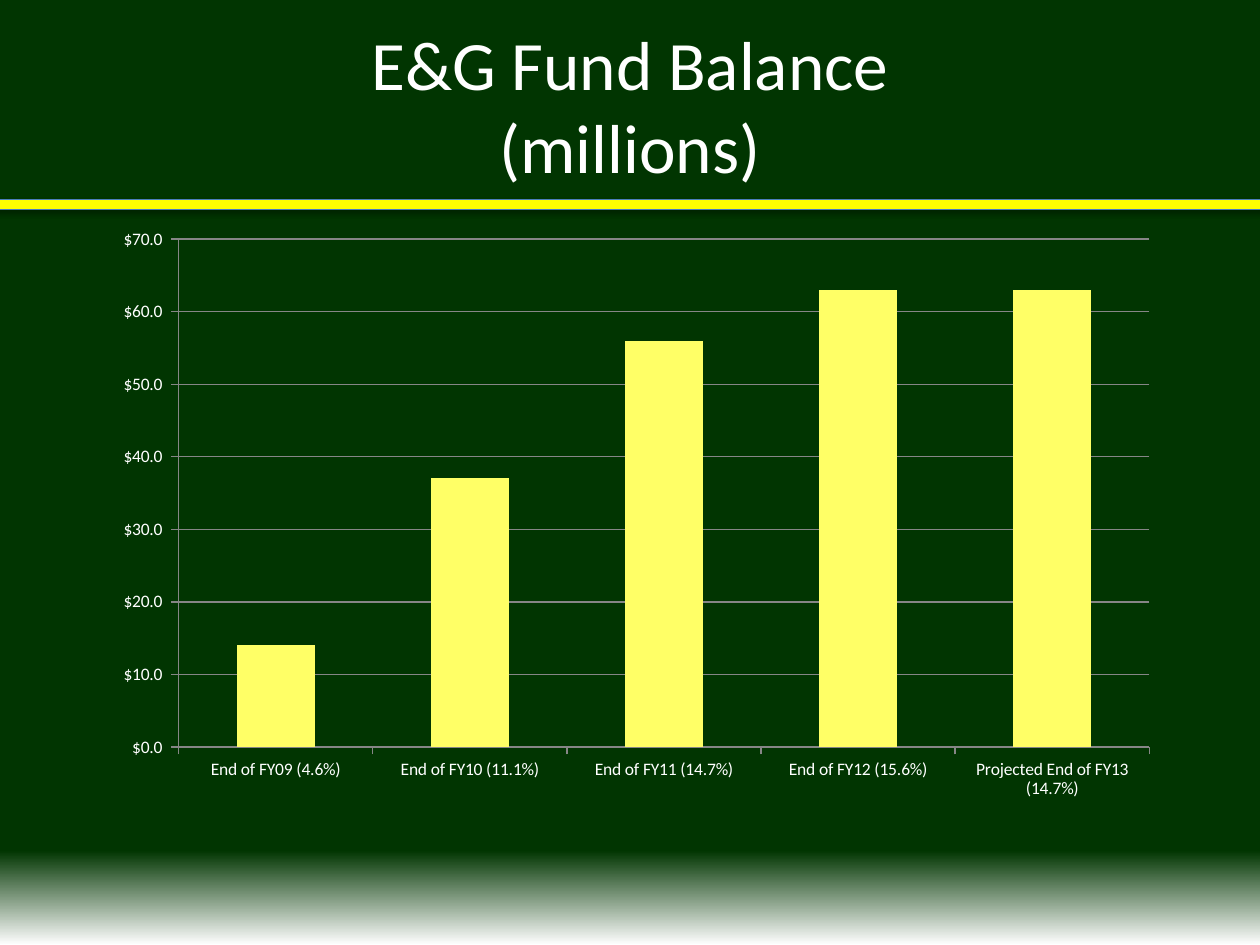
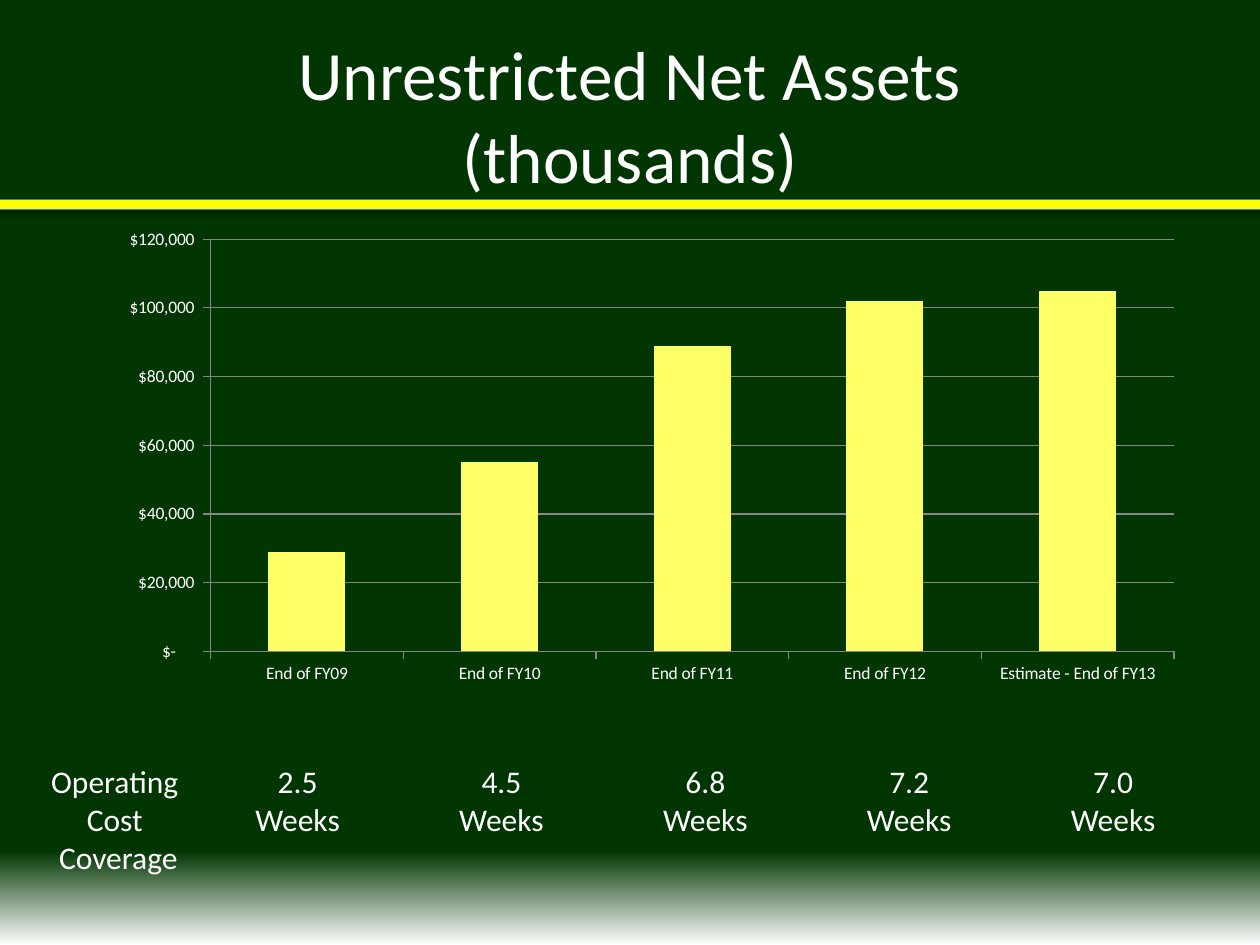
from dataclasses import dataclass

import lxml.etree
import pptx
import pptx.chart.data
import pptx.dml.color
import pptx.enum.chart
import pptx.enum.shapes
import pptx.enum.text
import pptx.oxml
import pptx.oxml.ns
import pptx.util
from pptx.util import Cm

COLORS = {
    "green": "013501",
    "white": "FFFFFF",
    "band": "FFFF00",
    "band_line": "4B7EBC",
    "bar": "FFFF66",
    "grid": "868686",
    "shadow": "000000",
}
FONT = "Calibri"


@dataclass(frozen=True)
class Box:
    left: float
    top: float
    width: float
    height: float

    def emu(self) -> tuple:
        return Cm(self.left), Cm(self.top), Cm(self.width), Cm(self.height)


@dataclass(frozen=True)
class ColumnChart:
    box: Box
    plot: tuple[float, float, float, float]
    categories: tuple[str, ...]
    values: tuple[float, ...]
    maximum: float
    step: float
    number_format: str


@dataclass(frozen=True)
class ChartSlide:
    title: tuple[str, str]
    title_top: float
    chart: ColumnChart


FUND_BALANCE = ChartSlide(
    ("E&G Fund Balance", "(millions)"),
    1.27,
    ColumnChart(
        Box(1.27, 0.84, 22.86, 16.18),
        (0.102, 0.246, 0.856, 0.633),
        ("End of FY09 (4.6%)", "End of FY10 (11.1%)", "End of FY11 (14.7%)",
         "End of FY12 (15.6%)", "Projected End of FY13 (14.7%)"),
        (14, 37, 56, 63, 63),
        70,
        10,
        r'"$"#,##0.0_);[Red]\("$"#,##0.0\)',
    ),
)
NET_ASSETS = ChartSlide(
    ("Unrestricted Net Assets", "(thousands)"),
    1.47,
    ColumnChart(
        Box(2.11, 4.45, 22.02, 9.53),
        (0.097, 0.039, 0.882, 0.872),
        ("End of FY09", "End of FY10", "End of FY11", "End of FY12",
         "Estimate - End of FY13"),
        (29000, 55000, 89000, 102000, 105000),
        120000,
        20000,
        r'_("$"* #,##0_);_("$"* \(#,##0\);_("$"* "-"??_);_(@_)',
    ),
)
COVERAGE_WEEKS = ("2.5", "4.5", "6.8", "7.2", "7.0")
COVERAGE_TOP = 15.24
WEEKS_LEFT = 4.88
WEEKS_STEP = 4.11


def rgb(name: str) -> pptx.dml.color.RGBColor:
    return pptx.dml.color.RGBColor.from_string(COLORS[name])


def add_run(p, text: str, size: float) -> None:
    r = p.add_run()
    r.text = text
    r.font.name = FONT
    r.font.size = pptx.util.Pt(size)
    r.font.color.rgb = rgb("white")


def set_background(prs) -> None:
    fill = prs.slide_master.background.fill
    fill.gradient()
    fill.gradient_angle = 270
    for stop, name, position in zip(fill.gradient_stops, ("green", "white"), (0.9, 1.0)):
        stop.color.rgb = rgb(name)
        stop.position = position


def add_band(s) -> None:
    sp = s.shapes.add_shape(pptx.enum.shapes.MSO_SHAPE.RECTANGLE,
                            *Box(-0.2, 4.02, 25.83, 0.2).emu())
    sp.fill.solid()
    sp.fill.fore_color.rgb = rgb("band")
    sp.line.color.rgb = rgb("band_line")
    sp.line.width = pptx.util.Pt(0.75)
    sp.shadow.inherit = False
    qn = pptx.oxml.ns.qn
    effects = sp.element.spPr.find(qn("a:effectLst"))
    shadow = lxml.etree.SubElement(
        effects, qn("a:outerShdw"), blurRad=str(pptx.util.Pt(3.1)),
        dist=str(pptx.util.Pt(1.8)), dir="5400000", rotWithShape="0")
    color = lxml.etree.SubElement(shadow, qn("a:srgbClr"), val=COLORS["shadow"])
    lxml.etree.SubElement(color, qn("a:alpha"), val="35000")


def add_title(s, lines: tuple[str, str], top: float) -> None:
    tf = s.shapes.add_textbox(*Box(1.27, top, 22.86, 3.18).emu()).text_frame
    tf.word_wrap = True
    tf.vertical_anchor = pptx.enum.text.MSO_ANCHOR.MIDDLE
    tf.margin_bottom = Cm(1.63)
    p = tf.paragraphs[0]
    p.alignment = pptx.enum.text.PP_ALIGN.CENTER
    add_run(p, lines[0], 39.6)
    p.add_line_break()
    add_run(p, lines[1], 39.6)


def add_label(s, box: Box, lines: tuple[str, ...]) -> None:
    tf = s.shapes.add_textbox(*box.emu()).text_frame
    tf.word_wrap = False
    tf.auto_size = pptx.enum.text.MSO_AUTO_SIZE.SHAPE_TO_FIT_TEXT
    for i, line in enumerate(lines):
        p = tf.add_paragraph() if i else tf.paragraphs[0]
        p.alignment = pptx.enum.text.PP_ALIGN.CENTER
        add_run(p, line, 18)


def set_plot_layout(chart, plot: tuple[float, float, float, float]) -> None:
    area = chart.element.chart.plotArea
    for old in area.findall(pptx.oxml.ns.qn("c:layout")):
        area.remove(old)
    x, y, w, h = plot
    area.insert(0, pptx.oxml.parse_xml(
        f'<c:layout {pptx.oxml.ns.nsdecls("c")}><c:manualLayout>'
        '<c:layoutTarget val="inner"/><c:xMode val="edge"/><c:yMode val="edge"/>'
        f'<c:x val="{x}"/><c:y val="{y}"/><c:w val="{w}"/><c:h val="{h}"/>'
        '</c:manualLayout></c:layout>'))


def add_column_chart(s, spec_chart: ColumnChart) -> None:
    data = pptx.chart.data.CategoryChartData(number_format=spec_chart.number_format)
    data.categories = spec_chart.categories
    data.add_series("Series 1", spec_chart.values)
    chart = s.shapes.add_chart(pptx.enum.chart.XL_CHART_TYPE.COLUMN_CLUSTERED,
                               *spec_chart.box.emu(), data).chart
    chart.has_title = False
    chart.has_legend = False
    chart.font.name = FONT
    chart.font.size = pptx.util.Pt(10)
    plot = chart.plots[0]
    plot.gap_width = 150
    plot.vary_by_categories = False
    fill = plot.series[0].format.fill
    fill.solid()
    fill.fore_color.rgb = rgb("bar")
    for axis in (chart.category_axis, chart.value_axis):
        axis.major_tick_mark = pptx.enum.chart.XL_TICK_MARK.OUTSIDE
        axis.format.line.color.rgb = rgb("grid")
        axis.tick_labels.font.name = FONT
        axis.tick_labels.font.size = pptx.util.Pt(10)
        axis.tick_labels.font.color.rgb = rgb("white")
    values = chart.value_axis
    values.minimum_scale = 0
    values.maximum_scale = spec_chart.maximum
    values.major_unit = spec_chart.step
    values.has_major_gridlines = True
    values.major_gridlines.format.line.color.rgb = rgb("grid")
    values.tick_labels.number_format = spec_chart.number_format
    values.tick_labels.number_format_is_linked = False
    set_plot_layout(chart, spec_chart.plot)


def add_chart_slide(prs, content: ChartSlide):
    s = prs.slides.add_slide(prs.slide_layouts[6])
    add_band(s)
    add_column_chart(s, content.chart)
    add_title(s, content.title, content.title_top)
    return s


def add_coverage(s) -> None:
    for i, weeks in enumerate(COVERAGE_WEEKS):
        box = Box(WEEKS_LEFT + i * WEEKS_STEP, COVERAGE_TOP, 2.24, 1.8)
        add_label(s, box, (weeks, "Weeks"))
    add_label(s, Box(0.76, COVERAGE_TOP, 3.25, 2.57), ("Operating ", "Cost ", "Coverage"))


def main() -> None:
    prs = pptx.Presentation()
    prs.slide_width = Cm(25.4)
    prs.slide_height = Cm(19.05)
    set_background(prs)
    add_chart_slide(prs, FUND_BALANCE)
    add_coverage(add_chart_slide(prs, NET_ASSETS))
    prs.save("out.pptx")


if __name__ == "__main__":
    main()
